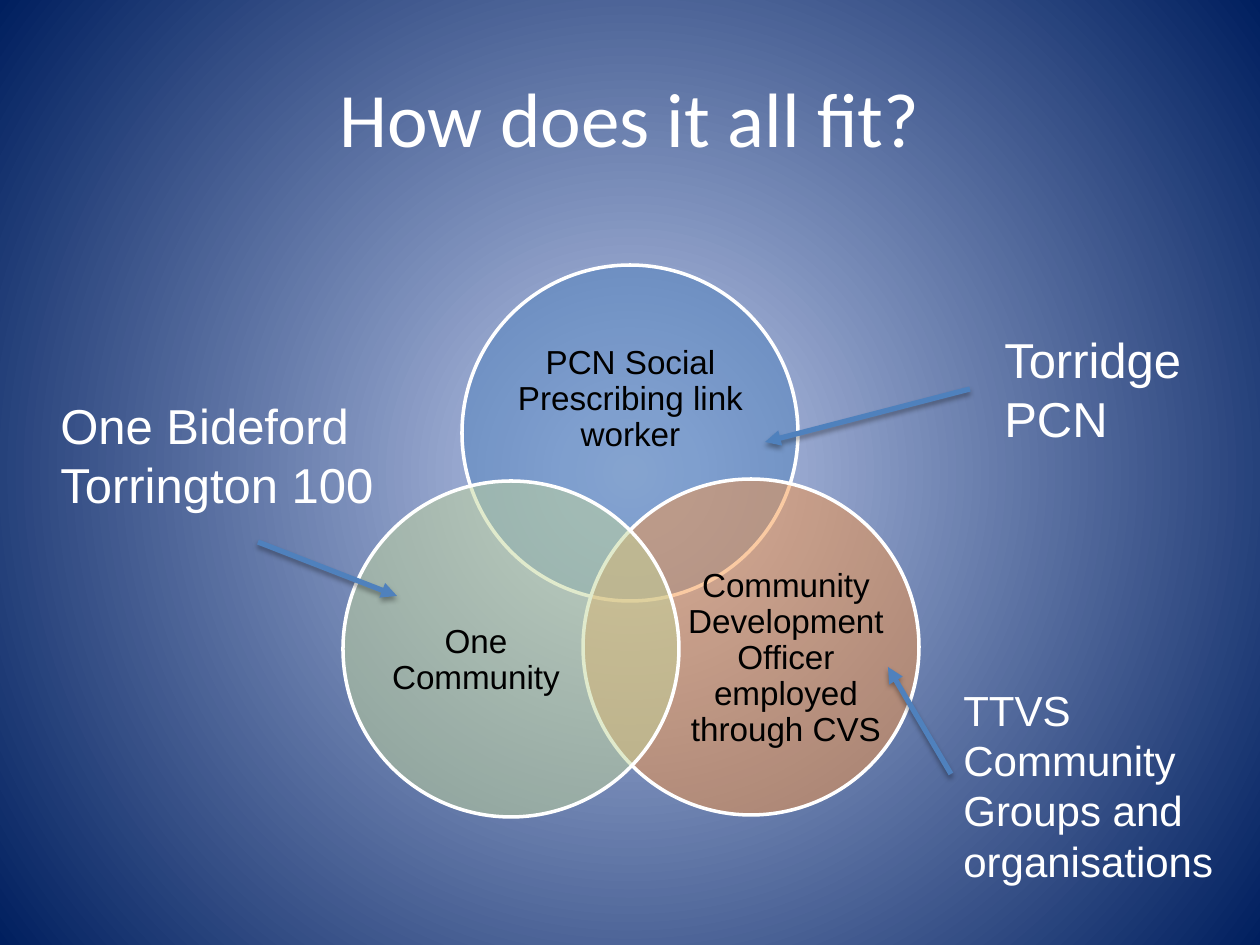
"""Build the slide that shows how three community roles overlap and who provides them."""
from lxml import etree
from pptx import Presentation
from pptx.dml.color import RGBColor
from pptx.enum.shapes import MSO_CONNECTOR, MSO_SHAPE
from pptx.enum.text import MSO_ANCHOR, PP_ALIGN
from pptx.oxml import parse_xml
from pptx.oxml.ns import nsdecls, qn
from pptx.util import Emu, Pt

CENTER, LEFT = PP_ALIGN.CENTER, PP_ALIGN.LEFT
TOP, MIDDLE = MSO_ANCHOR.TOP, MSO_ANCHOR.MIDDLE
ELLIPSE, STRAIGHT = MSO_SHAPE.OVAL, MSO_CONNECTOR.STRAIGHT
EMU_PER_PX = 914400 / 126
WHITE, BLACK, BLUE = "FFFFFF", "000000", "4F81BD"
DIAMETER = 336


def px(value):
    return Emu(round(value * EMU_PER_PX))


def color(text):
    return RGBColor.from_string(text)


def apply(target, values):
    for name, value in values.items():
        setattr(target, name, value)


class SlideBuilder:
    def __init__(self, deck):
        self.page = deck.slides.add_slide(deck.slide_layouts[6])

    def background(self, stops):
        self.page.background.fill.gradient()
        gradient = self.page.element.find(".//" + qn("a:gradFill"))
        stop_xml = "".join(
            f'<a:gs pos="{percent * 1000}"><a:srgbClr val="{shade}"/></a:gs>'
            for percent, shade in stops)
        radial = parse_xml(
            f'<a:gradFill {nsdecls("a")} rotWithShape="1"><a:gsLst>{stop_xml}</a:gsLst>'
            '<a:path path="circle"><a:fillToRect l="50000" t="50000" r="50000" b="50000"/>'
            '</a:path></a:gradFill>')
        gradient.getparent().replace(gradient, radial)

    def text(self, frame, lines, size, shade=WHITE, font="Arial", align=LEFT,
             anchor=TOP, inset=None, spacing=None):
        box = self.page.shapes.add_textbox(*map(px, frame))
        apply(box.text_frame, {"word_wrap": True, "vertical_anchor": anchor})
        if inset is not None:
            sides = ("left", "top", "right", "bottom")
            apply(box.text_frame, {f"margin_{side}": px(inset) for side in sides})
        box.text_frame.text = "\n".join(lines)
        for para in box.text_frame.paragraphs:
            apply(para, {"alignment": align, **(spacing or {})})
            for span in para.runs:
                apply(span.font, {"name": font, "size": Pt(size)})
                span.font.color.rgb = color(shade)

    def circle(self, left, top, shade):
        shape = self.page.shapes.add_shape(
            ELLIPSE, px(left), px(top), px(DIAMETER), px(DIAMETER))
        shape.shadow.inherit = False
        shape.fill.solid()
        shape.fill.fore_color.rgb = color(shade)
        fill = shape.fill.fore_color
        fill_xml = shape.element.spPr.find(qn("a:solidFill"))
        etree.SubElement(fill_xml[0], qn("a:alpha"), val="50000")
        shape.line.color.rgb = color(WHITE)
        shape.line.width = Pt(2)

    def arrow(self, start, end):
        connector = self.page.shapes.add_connector(STRAIGHT, *map(px, start + end))
        connector.line.color.rgb = color(BLUE)
        connector.line.width = Pt(3)
        properties = connector.element.spPr
        etree.SubElement(properties.find(qn("a:ln")), qn("a:tailEnd"), type="triangle")
        properties.append(parse_xml(
            f'<a:effectLst {nsdecls("a")}>'
            f'<a:outerShdw blurRad="{Pt(3.1)}" dist="{Pt(1.8)}" dir="5400000" rotWithShape="0">'
            f'<a:srgbClr val="{BLACK}"><a:alpha val="35000"/></a:srgbClr>'
            '</a:outerShdw></a:effectLst>'))


def main():
    deck = Presentation()
    deck.slide_width, deck.slide_height = px(1260), px(945)
    slide = SlideBuilder(deck)
    slide.background([(0, "BDC7E3"), (8, "B0BEE1"), (100, "001F5F")])
    slide.text((63, 38, 1134, 157), ["How does it all fit?"], 44,
               font="Calibri", align=CENTER, anchor=MIDDLE, inset=13)

    circles = [
        (462, 265, BLUE, (507, 324, 247, 151), "PCN Social Prescribing link worker"),
        (583, 479, "F79646", (685, 566, 202, 185),
         "Community Development Officer employed through CVS"),
        (343, 481, "C3D69B", (375, 568, 202, 185), "One Community"),
    ]
    for left, top, shade, frame, label in circles:
        slide.circle(left, top, shade)
        slide.text(frame, [label], 19, BLACK, align=CENTER, anchor=MIDDLE, inset=0,
                   spacing={"line_spacing": 0.9, "space_after": Pt(7)})

    callouts = [
        ((970, 389), (765, 442), (992, 323, 217, 131), ["Torridge PCN"], 28),
        ((258, 542), (397, 596), (48, 389, 369, 131), ["One Bideford", "Torrington 100"], 28),
        ((951, 774), (888, 667), (951, 678, 277, 217),
         ["TTVS", "Community Groups and organisations"], 24),
    ]
    for start, end, frame, lines, size in callouts:
        slide.arrow(start, end)
        slide.text(frame, lines, size)
    deck.save("out.pptx")


if __name__ == "__main__":
    main()
